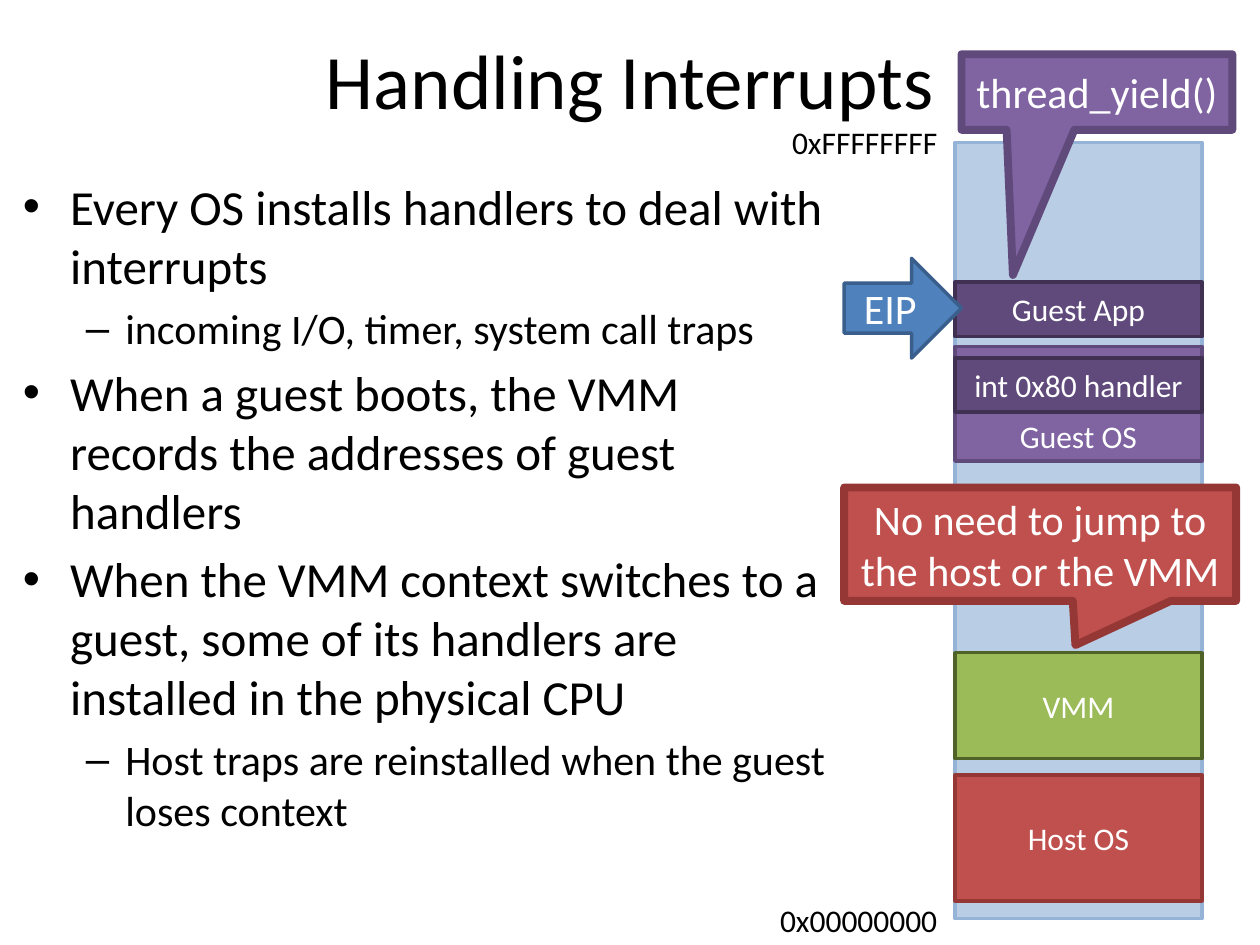
from lxml import etree
from pptx import Presentation
from pptx.dml.color import RGBColor
from pptx.enum import shapes, text
from pptx.oxml.ns import qn
from pptx.util import Pt

THEME = {
    "font": "Calibri",
    "title": 44, "point": 28, "subpoint": 24, "callout": 24, "label": 18,
    "text": "000000", "on_fill": "FFFFFF",
    # fill and line
    "memory": ("B9CDE5", "95B3D7"),
    "host": ("C0504D", "953735"),
    "vmm": ("9BBB59", "4F6228"),
    "guest": ("8064A2", "604A7B"),
    "guest_code": ("604A7B", "403152"),
    "pointer": ("4F81BD", "3A5F8C"),
}
THIN, THICK = 2, 4.5

TITLE = "Handling Interrupts"
POINTS = [
    (0, "Every OS installs handlers to deal with interrupts"),
    (1, "incoming I/O, timer, system call traps"),
    (0, "When a guest boots, the VMM records the addresses of guest handlers"),
    (0, "When the VMM context switches to a guest, some of its handlers are "
        "installed in the physical CPU"),
    (1, "Host traps are reinstalled when the guest loses context"),
]
# bullet, left margin, hanging indent, type size
LEVELS = [("•", 27, 27, "point"), ("–", 58.5, 22.5, "subpoint")]

MEMORY_LEFT, MEMORY_WIDTH = 545.76, 141.12
MEMORY_TOP, MEMORY_HEIGHT = 81.4, 443.5
ADDRESSES = [("0x00000000", 511.2), ("0xFFFFFFFF", 67)]
ADDRESS_WIDTH, ADDRESS_HEIGHT = 105, 29

MIDDLE, BOTTOM = text.MSO_ANCHOR.MIDDLE, text.MSO_ANCHOR.BOTTOM
# label, colours, top, height, anchor
REGIONS = [
    ("Host OS", "host", 442.8, 72, MIDDLE),
    ("VMM", "vmm", 373, 60.5, MIDDLE),
    ("Guest OS", "guest", 198, 65.5, BOTTOM),
    ("Guest App", "guest_code", 161.3, 31, MIDDLE),
    ("int 0x80 handler", "guest_code", 204.5, 31, MIDDLE),
]
# label, colours, box, pointer tip as a share of the box from its centre
CALLOUTS = [
    ("No need to jump to the host or the VMM", "host",
     (482.4, 278.6, 224, 64.8), (0.09, 0.89)),
    ("thread_yield()", "guest", (549.4, 31, 154.8, 43.2), (-0.31, 2.42)),
]
EIP_BOX = (482.4, 147.6, 67, 57)


def rgb(code):
    return RGBColor.from_string(code)


def style(paragraph, size, color, align):
    paragraph.alignment = align
    for run in paragraph.runs:
        run.font.name = THEME["font"]
        run.font.size = Pt(THEME[size])
        run.font.color.rgb = rgb(THEME[color])


def add_text(slide, box, words, size, align, anchor=text.MSO_ANCHOR.TOP, wrap=True):
    frame = slide.shapes.add_textbox(*map(Pt, box)).text_frame
    frame.word_wrap = wrap
    frame.vertical_anchor = anchor
    frame.text = words
    style(frame.paragraphs[0], size, "text", align)


def add_block(slide, kind, box, colors, label="", size="label", line=THIN, anchor=MIDDLE):
    block = slide.shapes.add_shape(kind, *map(Pt, box))
    block.shadow.inherit = False
    fill, edge = THEME[colors]
    block.fill.solid()
    block.fill.fore_color.rgb = rgb(fill)
    block.line.color.rgb = rgb(edge)
    block.line.width = Pt(line)
    frame = block.text_frame
    frame.word_wrap = True
    frame.vertical_anchor = anchor
    frame.text = label
    style(frame.paragraphs[0], size, "on_fill", text.PP_ALIGN.CENTER)
    return block


def add_points(slide, box):
    frame = slide.shapes.add_textbox(*map(Pt, box)).text_frame
    frame.word_wrap = True
    frame.text = "\n".join(words for _, words in POINTS)
    for paragraph, (level, _) in zip(frame.paragraphs, POINTS):
        bullet, margin, hanging, size = LEVELS[level]
        style(paragraph, size, "text", text.PP_ALIGN.LEFT)
        paragraph.level = level
        paragraph.space_before = Pt(0.2 * THEME[size])
        props = paragraph._p.get_or_add_pPr()
        props.set("marL", str(Pt(margin)))
        props.set("indent", str(-Pt(hanging)))
        etree.SubElement(props, qn("a:buFont"), typeface="Arial")
        etree.SubElement(props, qn("a:buChar"), char=bullet)


def main():
    deck = Presentation()
    deck.slide_width, deck.slide_height = Pt(720), Pt(540)
    slide = deck.slides.add_slide(deck.slide_layouts[6])
    kinds = shapes.MSO_SHAPE

    add_text(slide, (36, 0, 648, 90), TITLE, "title", text.PP_ALIGN.CENTER, MIDDLE)
    add_points(slide, (6, 97.2, 473.8, 433.4))

    add_block(slide, kinds.RECTANGLE,
              (MEMORY_LEFT, MEMORY_TOP, MEMORY_WIDTH, MEMORY_HEIGHT), "memory")
    for address, top in ADDRESSES:
        box = (MEMORY_LEFT - 3 - ADDRESS_WIDTH, top, ADDRESS_WIDTH, ADDRESS_HEIGHT)
        add_text(slide, box, address, "label", text.PP_ALIGN.RIGHT)
    for label, colors, top, height, anchor in REGIONS:
        add_block(slide, kinds.RECTANGLE, (MEMORY_LEFT, top, MEMORY_WIDTH, height),
                  colors, label, anchor=anchor)

    for label, colors, box, tip in CALLOUTS:
        callout = add_block(slide, kinds.RECTANGULAR_CALLOUT, box, colors, label,
                            "callout", THICK)
        callout.adjustments[0], callout.adjustments[1] = tip
    add_block(slide, kinds.RIGHT_ARROW, EIP_BOX, "pointer", "EIP", "callout")

    deck.save("out.pptx")


if __name__ == "__main__":
    main()
